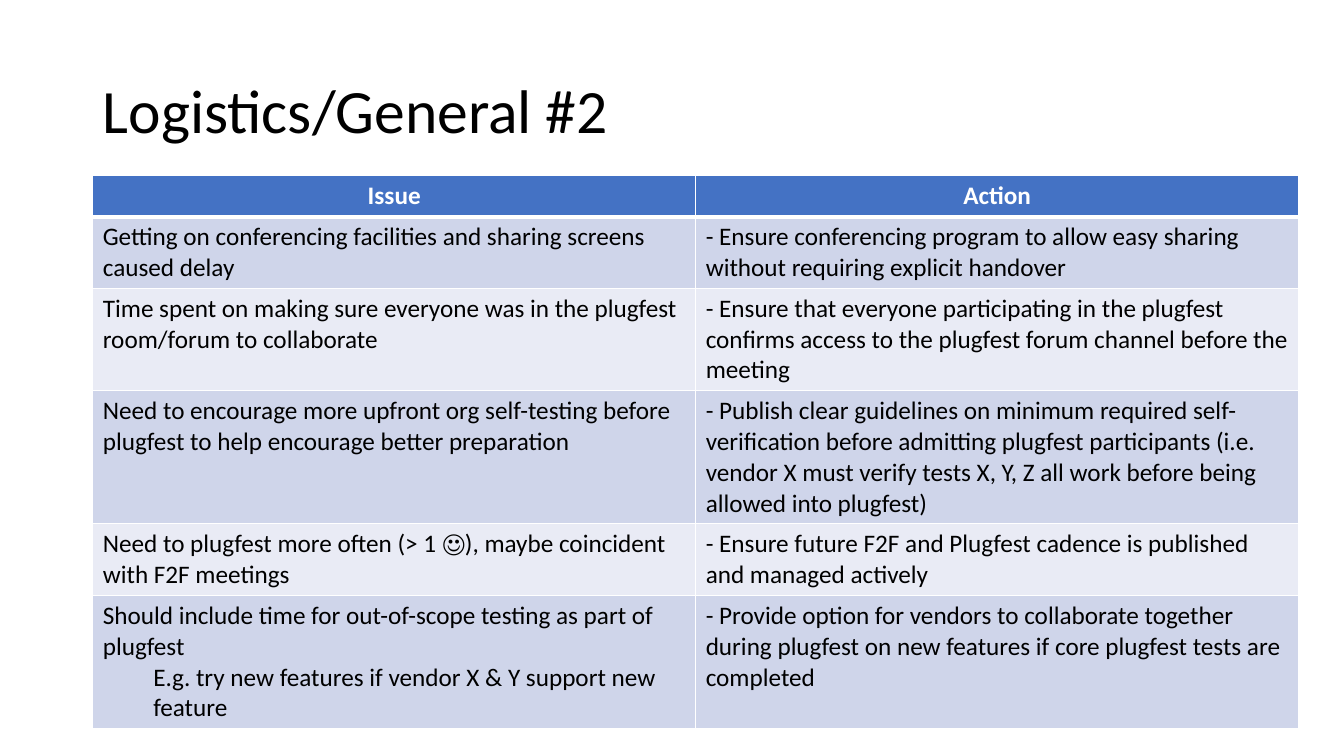
from lxml.etree import SubElement
from pptx import Presentation
from pptx.dml.color import RGBColor
from pptx.enum.text import MSO_ANCHOR, MSO_AUTO_SIZE, PP_ALIGN
from pptx.oxml.ns import qn
from pptx.util import Inches, Pt

SLIDE_WIDTH, SLIDE_HEIGHT = Inches(13.33), Inches(7.5)
LEFT_MARGIN = Inches(0.92)
COLUMN_WIDTH, ROW_HEIGHT = Inches(5.98), Inches(0.41)
FONT = "Calibri"
BLACK, WHITE = "000000", "FFFFFF"
HEADER_FILL, BAND_FILLS = "4472C4", ("CFD5EA", "E9EBF5")

HEADINGS = ("Issue", "Action")
ISSUES_AND_ACTIONS = [
    ("Getting on conferencing facilities and sharing screens caused delay",
     "- Ensure conferencing program to allow easy sharing without requiring explicit handover"),
    ("Time spent on making sure everyone was in the plugfest room/forum to collaborate",
     "- Ensure that everyone participating in the plugfest confirms access to the plugfest "
     "forum channel before the meeting"),
    ("Need to encourage more upfront org self-testing before plugfest to help encourage "
     "better preparation",
     "- Publish clear guidelines on minimum required self-verification before admitting "
     "plugfest participants (i.e. vendor X must verify tests X, Y, Z all work before being "
     "allowed into plugfest)"),
    ("Need to plugfest more often (> 1 ☺), maybe coincident with F2F meetings",
     "- Ensure future F2F and Plugfest cadence is published and managed actively"),
    ("Should include time for out-of-scope testing as part of plugfest\n"
     "E.g. try new features if vendor X & Y support new feature",
     "- Provide option for vendors to collaborate together during plugfest on new features "
     "if core plugfest tests are completed"),
]


def color(hex_value):
    """Turn a hex string into a colour."""
    return RGBColor.from_string(hex_value)


def add_run(paragraph, words, size, ink, bold=False):
    """Append one formatted run to a paragraph."""
    run = paragraph.add_run()
    run.text = words
    run.font.name, run.font.size, run.font.bold = FONT, Pt(size), bold
    run.font.color.rgb = color(ink)


def add_title(slide, words):
    """Place and fill the title placeholder."""
    title = slide.shapes.title
    title.left, title.top = LEFT_MARGIN, Inches(0.4)
    title.width, title.height = Inches(11.5), Inches(1.45)
    frame = title.text_frame
    frame.auto_size = MSO_AUTO_SIZE.NONE
    frame.vertical_anchor = MSO_ANCHOR.MIDDLE
    heading = frame.paragraphs[0]
    heading.alignment, heading.line_spacing = PP_ALIGN.LEFT, 0.9
    add_run(heading, words, 44, BLACK)


def set_borders(cell, top, bottom):
    """Draw white cell borders, with the top and bottom widths in points."""
    properties = cell._tc.get_or_add_tcPr()
    for side, width in (("L", 1), ("R", 1), ("T", top), ("B", bottom)):
        line = SubElement(properties, qn(f"a:ln{side}"), w=str(Pt(width)))
        fill = SubElement(line, qn("a:solidFill"))
        SubElement(fill, qn("a:srgbClr"), val=WHITE)


def fill_cell(cell, words, row):
    """Write a cell with the look of its row; later lines are indented."""
    is_header = row == 0
    set_borders(cell, 3 if row == 1 else 1, 3 if is_header else 1)
    cell.fill.solid()
    cell.fill.fore_color.rgb = color(HEADER_FILL if is_header else BAND_FILLS[(row - 1) % 2])
    frame = cell.text_frame
    for level, line in enumerate(words.split("\n")):
        paragraph = frame.add_paragraph() if level else frame.paragraphs[0]
        paragraph.alignment = PP_ALIGN.CENTER if is_header else PP_ALIGN.LEFT
        if level:
            paragraph.level = level
            indents = paragraph._p.get_or_add_pPr()
            indents.set("marL", str(Inches(0.5)))
            indents.set("indent", "0")
        add_run(paragraph, line, 18, WHITE if is_header else BLACK, is_header)


def add_issue_table(slide, rows):
    """Add the table of issues and actions."""
    columns = len(rows[0])
    table = slide.shapes.add_table(
        len(rows), columns, LEFT_MARGIN, Inches(1.74),
        COLUMN_WIDTH * columns, ROW_HEIGHT * len(rows)).table
    for row, entries in enumerate(rows):
        for column, words in enumerate(entries):
            fill_cell(table.cell(row, column), words, row)


def main():
    """Build and save the slide."""
    deck = Presentation()
    deck.slide_width, deck.slide_height = SLIDE_WIDTH, SLIDE_HEIGHT
    slide = deck.slides.add_slide(deck.slide_layouts[5])
    add_title(slide, "Logistics/General #2")
    add_issue_table(slide, [HEADINGS, *ISSUES_AND_ACTIONS])
    deck.save("out.pptx")


if __name__ == "__main__":
    main()
